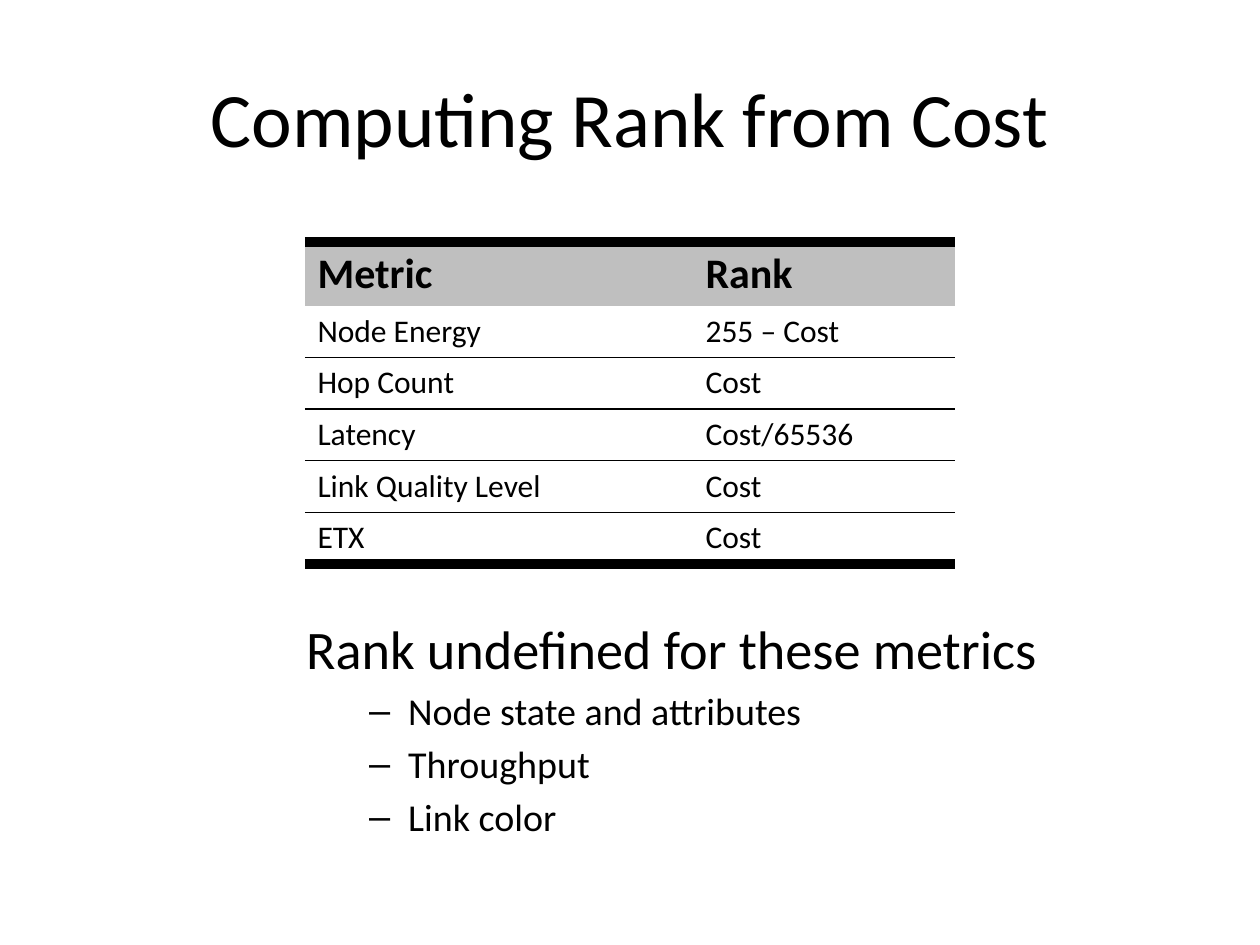
from lxml.etree import SubElement
from pptx import Presentation
from pptx.dml.color import RGBColor
from pptx.enum.text import MSO_ANCHOR as Anchor, MSO_AUTO_SIZE as AutoSize, PP_ALIGN as Align
from pptx.oxml.ns import qn
from pptx.util import Inches, Pt

FONT = "Calibri"
BLACK, WHITE, GREY = "000000", "FFFFFF", "BFBFBF"
PLAIN_STYLE = "{2D5ABB26-0587-4C30-8999-92F81FD0307C}"
THIN, THICK = 1, 6

METRICS = [
    ("Metric", "Rank"),
    ("Node Energy", "255 – Cost"),
    ("Hop Count", "Cost"),
    ("Latency", "Cost/65536"),
    ("Link Quality Level", "Cost"),
    ("ETX", "Cost"),
]
UNDEFINED = ["Node state and attributes", "Throughput", "Link color"]


def color(value):
    """Turn a hex string into a colour."""
    return RGBColor.from_string(value)


def set_values(target, values):
    """Set attributes from a dict of format values."""
    for name, value in values.items():
        setattr(target, name, value)


def format_font(font, size, bold=False):
    """Give a font the face, size and colour of the page."""
    set_values(font, {"name": FONT, "size": Pt(size), "bold": bold})
    font.color.rgb = color(BLACK)


def place(box, left, top, width, height):
    """Move and size a box, in inches."""
    set_values(box, {"left": Inches(left), "top": Inches(top),
                     "width": Inches(width), "height": Inches(height)})


def add_border(cell, side, width):
    """Draw one border of a cell."""
    line = SubElement(cell._tc.get_or_add_tcPr(), qn(f"a:{side}"), w=str(Pt(width)))
    fill = SubElement(line, qn("a:solidFill"))
    SubElement(fill, qn("a:srgbClr"), val=BLACK)


def fill_title(box, text):
    """Place the centred title."""
    place(box, 0.5, 0.3, 9, 1.25)
    frame = box.text_frame
    set_values(frame, {"text": text, "vertical_anchor": Anchor.MIDDLE,
                       "auto_size": AutoSize.NONE})
    para = frame.paragraphs[0]
    para.alignment = Align.CENTER
    format_font(para.font, 44)


def add_metric_table(page, rows):
    """Add the table with a grey header and ruled rows."""
    frame = page.shapes.add_table(len(rows), 2, Inches(2.42), Inches(1.92),
                                  Inches(5.17), Inches(2.53))
    table = frame.table
    set_values(table, {"first_row": False, "horz_banding": False})
    table._tbl.tblPr.find(qn("a:tableStyleId")).text = PLAIN_STYLE
    for column, width in zip(table.columns, (3.08, 2.08)):
        column.width = Inches(width)
    last = len(rows) - 1
    for index, values in enumerate(rows):
        header = index == 0
        table.rows[index].height = Inches(0.41)
        for cell, text in zip(table.rows[index].cells, values):
            cell.text = text
            format_font(cell.text_frame.paragraphs[0].font, 24 if header else 18, header)
            if index > 1:
                add_border(cell, "lnT", THIN)
            if header:
                add_border(cell, "lnT", THICK)
            else:
                add_border(cell, "lnB", THICK if index == last else THIN)
            cell.fill.solid()
            cell.fill.fore_color.rgb = color(GREY if header else WHITE)


def format_item(para, text, size, margin, indent, bullet):
    """Write one list paragraph with a hanging indent."""
    para.text = text
    properties = para._p.get_or_add_pPr()
    properties.set("marL", str(Inches(margin)))
    properties.set("indent", str(Inches(indent)))
    if bullet:
        SubElement(properties, qn("a:buChar"), char=bullet)
    else:
        SubElement(properties, qn("a:buNone"))
    format_font(para.font, size)


def fill_list(box, heading, items):
    """Place the heading and its dashed list."""
    place(box, 2.33, 4.83, 6, 1.87)
    frame = box.text_frame
    set_values(frame, {"word_wrap": True, "auto_size": AutoSize.NONE,
                       "vertical_anchor": Anchor.TOP})
    first = frame.paragraphs[0]
    format_item(first, heading, 31, 0.38, -0.38, None)
    first.space_before = Pt(0)
    for item in items:
        para = frame.add_paragraph()
        para.level = 1
        format_item(para, item, 21.7, 0.81, -0.31, "–")
        para.space_before = Pt(4.34)


def main():
    """Build and save the deck."""
    deck = Presentation()
    set_values(deck, {"slide_width": Inches(10), "slide_height": Inches(7.5)})
    page = deck.slides.add_slide(deck.slide_layouts[1])
    fill_title(page.shapes.title, "Computing Rank from Cost")
    add_metric_table(page, METRICS)
    fill_list(page.placeholders[1], "Rank undefined for these metrics", UNDEFINED)
    deck.save("out.pptx")


if __name__ == "__main__":
    main()
